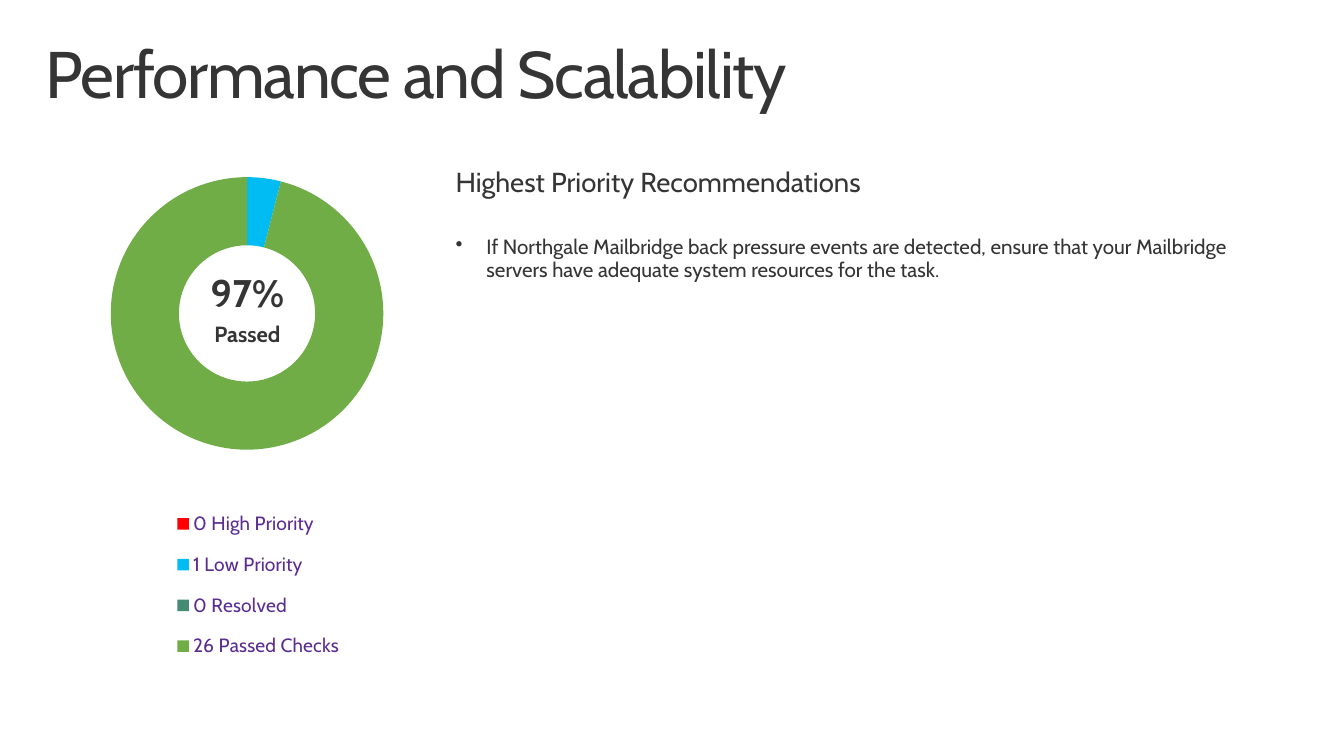
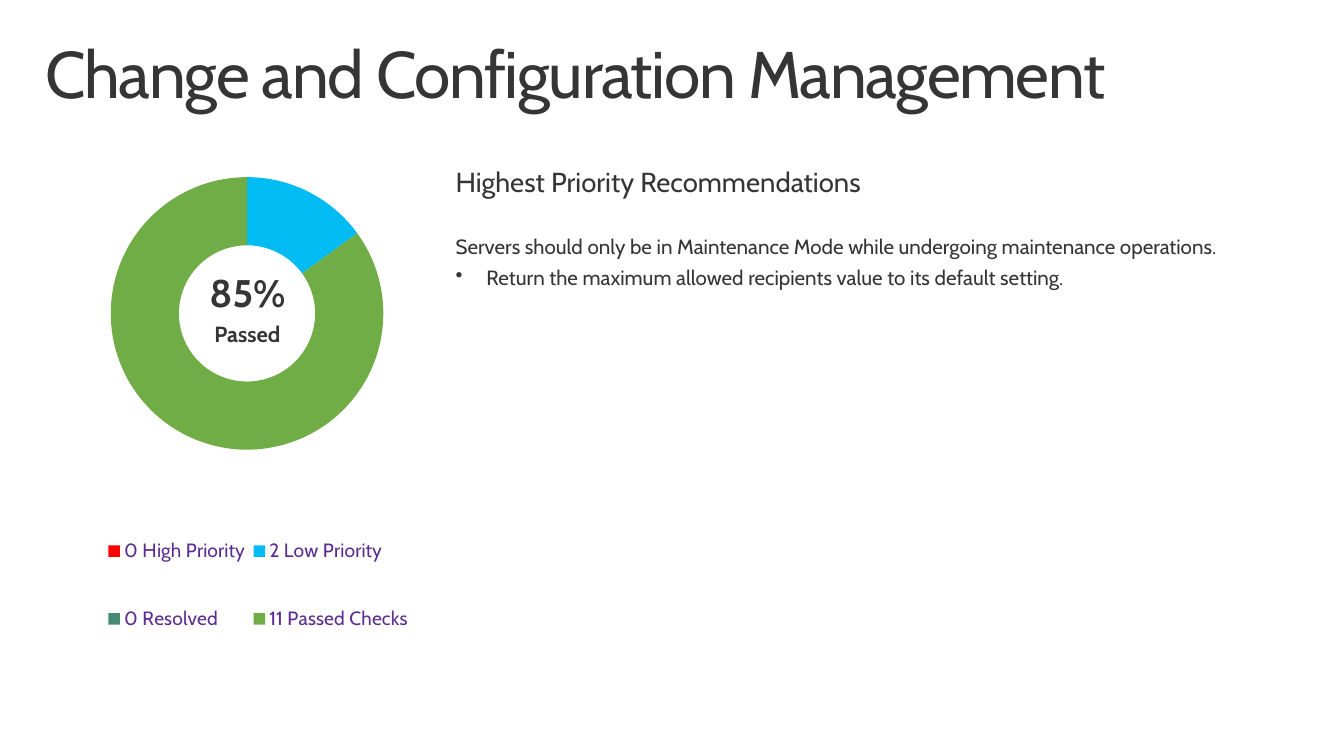
"""Build two health check slides, each with a doughnut of check results and recommendations."""
from lxml import etree
from pptx import Presentation
from pptx.chart.data import CategoryChartData
from pptx.dml.color import RGBColor
from pptx.enum.chart import XL_CHART_TYPE, XL_LEGEND_POSITION
from pptx.enum.text import PP_ALIGN
from pptx.oxml.ns import qn
from pptx.util import Pt

DOUGHNUT = XL_CHART_TYPE.DOUGHNUT
BOTTOM = XL_LEGEND_POSITION.BOTTOM
LEFT, CENTER = PP_ALIGN.LEFT, PP_ALIGN.CENTER

FONT = "Cabin"
COLORS = {
    "text": "353535",
    "legend": "5B2D91",
    "high": "FF0000",
    "high gap": "001D49",
    "low": "00BCF2",
    "low gap": "A3008F",
    "resolved": "458B74",
    "resolved gap": "D1D1D1",
    "passed": "70AD47",
}
RESULT_COLORS = ("high", "high gap", "low", "low gap", "resolved", "resolved gap", "passed")
GAP = ("", None)
HEADING = "Highest Priority Recommendations"

SLIDES = [
    {
        "title": "Performance and Scalability",
        "results": [("0 High Priority ", 0), GAP, ("1 Low Priority", 4), GAP,
                    ("0 Resolved", 0), GAP, ("26 Passed Checks", 96)],
        "legend_width": 208,
        "score": "97%",
        "intro": [],
        "bullets": ["If Northgale Mailbridge back pressure events are detected, ensure that your "
                    "Mailbridge servers have adequate system resources for the task."],
    },
    {
        "title": "Change and Configuration Management",
        "results": [("0 High Priority ", 0), GAP, ("2 Low Priority", 15), GAP,
                    ("0 Resolved", 0), GAP, ("11 Passed Checks", 85)],
        "legend_width": 224,
        "score": "85%",
        "intro": ["Servers should only be in Maintenance Mode while undergoing "
                  "maintenance operations."],
        "bullets": ["Return the maximum allowed recipients value to its default setting."],
    },
]

SLIDE_SIZE = (979.2, 550.8)
TITLE_BOX = (21.6, 23, 936, 72)
CHART_BOX = (0, 79.2, 347.8, 422.6)
SCORE_BOX = (129.2, 188, 102.2, 229.7)
ADVICE_BOX = (317.5, 111.6, 605.5, 90)
TITLE_INSETS = (11.5, 7.2)
BODY_INSETS = (14.4, 11.5)
PLOT_AREA = (80.7, 31.3, 198.6, 235.8)
LEGEND_CENTER, LEGEND_TOP, LEGEND_HEIGHT = 188.2, 281.6, 131
HOLE_SIZE = 68
BULLET_INDENT = 22.5


def place(box):
    return [Pt(length) for length in box]


def style_font(font, size, color="text", bold=False):
    font.name, font.size, font.bold = FONT, Pt(size), bold
    font.color.rgb = RGBColor.from_string(COLORS[color])


def add_text(slide, box, insets, lines, align=LEFT):
    """Add a text box of (text, size, bold, space after) lines and return its paragraphs."""
    frame = slide.shapes.add_textbox(*place(box)).text_frame
    frame.word_wrap = True
    frame.margin_left = frame.margin_right = Pt(insets[0])
    frame.margin_top = frame.margin_bottom = Pt(insets[1])
    frame.text = "\n".join(line[0] for line in lines)
    for paragraph, (_, size, bold, space_after) in zip(frame.paragraphs, lines):
        paragraph.alignment = align
        paragraph.line_spacing = 0.9
        paragraph.space_after = Pt(space_after)
        style_font(paragraph.runs[0].font, size, bold=bold)
    return frame.paragraphs


def add_bullet(paragraph):
    properties = paragraph._p.get_or_add_pPr()
    properties.set("marL", str(Pt(BULLET_INDENT)))
    properties.set("indent", str(-Pt(BULLET_INDENT)))
    etree.SubElement(properties, qn("a:buChar")).set("char", "•")


def set_layout(parent, index, area, inner=False):
    """Fix the area of a chart part, given in points from the chart's corner."""
    for old_layout in parent.findall(qn("c:layout")):
        parent.remove(old_layout)
    layout = etree.Element(qn("c:layout"))
    manual = etree.SubElement(layout, qn("c:manualLayout"))
    settings = [("layoutTarget", "inner")] if inner else []
    settings += [("xMode", "edge"), ("yMode", "edge")]
    chart_size = CHART_BOX[2:] * 2
    settings += [(tag, length / whole) for tag, length, whole in zip("xywh", area, chart_size)]
    for tag, value in settings:
        etree.SubElement(manual, qn(f"c:{tag}")).set("val", str(value))
    parent.insert(index, layout)


def hide_legend_entries(legend, indexes):
    for position, index in enumerate(indexes, start=1):
        entry = etree.Element(qn("c:legendEntry"))
        etree.SubElement(entry, qn("c:idx")).set("val", str(index))
        etree.SubElement(entry, qn("c:delete")).set("val", "1")
        legend.insert(position, entry)


def add_results_chart(slide, results, legend_width):
    data = CategoryChartData()
    data.categories = [label for label, _ in results]
    data.add_series("Series 1", [share for _, share in results])
    chart = slide.shapes.add_chart(DOUGHNUT, *place(CHART_BOX), data).chart
    chart.has_title = False
    style_font(chart.font, 10)
    chart.has_legend = True
    chart.legend.position = BOTTOM
    chart.legend.include_in_layout = False
    style_font(chart.legend.font, 14, "legend")

    for index, color in enumerate(RESULT_COLORS):
        result_format = chart.plots[0].series[0].points[index].format
        result_format.fill.solid()
        result_format.fill.fore_color.rgb = RGBColor.from_string(COLORS[color])
        result_format.line.fill.background()

    plot_area = chart._chartSpace.chart.plotArea
    plot_area.find(".//" + qn("c:holeSize")).set("val", str(HOLE_SIZE))
    set_layout(plot_area, 0, PLOT_AREA, inner=True)
    legend = chart.legend._element
    gaps = [index for index, result in enumerate(results) if result == GAP]
    legend_left = LEGEND_CENTER - legend_width / 2
    set_layout(legend, 1, (legend_left, LEGEND_TOP, legend_width, LEGEND_HEIGHT))
    hide_legend_entries(legend, gaps)


def add_report_slide(deck, content):
    slide = deck.slides.add_slide(deck.slide_layouts[6])
    title = add_text(slide, TITLE_BOX, TITLE_INSETS, [(content["title"], 48, False, 0)])
    title[0].runs[0].font._element.set("spc", "-100")
    add_results_chart(slide, content["results"], content["legend_width"])
    add_text(slide, SCORE_BOX, BODY_INSETS,
             [(content["score"], 28, True, 6), ("Passed", 16, True, 6)], CENTER)
    advice = content["intro"] + content["bullets"]
    paragraphs = add_text(slide, ADVICE_BOX, BODY_INSETS,
                          [(HEADING, 20, False, 28)]
                          + [(text, 15, False, 6) for text in advice])
    for paragraph in paragraphs[1 + len(content["intro"]):]:
        add_bullet(paragraph)


def main():
    deck = Presentation()
    deck.slide_width, deck.slide_height = place(SLIDE_SIZE)
    for content in SLIDES:
        add_report_slide(deck, content)
    deck.save("out.pptx")


if __name__ == "__main__":
    main()
